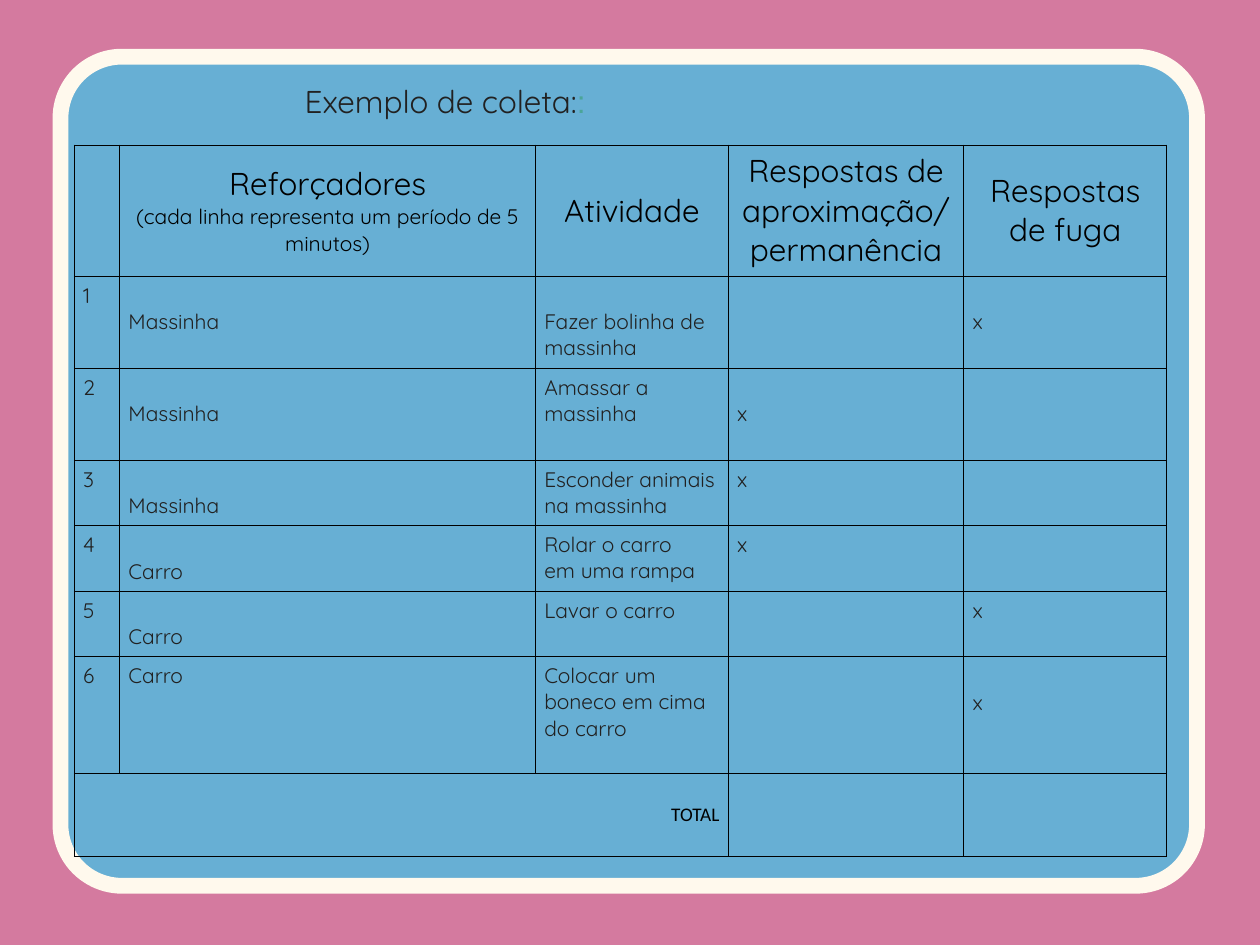
from lxml import etree
from pptx import Presentation
from pptx.dml.color import RGBColor
from pptx.enum import shapes, text
from pptx.oxml import ns
from pptx.util import Inches, Pt

PINK = RGBColor(0xD4, 0x7A, 0x9F)
BLUE = RGBColor(0x67, 0xAF, 0xD4)
CREAM = RGBColor(0xFF, 0xF9, 0xED)
BLACK = RGBColor(0, 0, 0)
DARK = RGBColor(0x21, 0x21, 0x21)
GREEN = RGBColor(0x4A, 0xA5, 0x98)
FONT = "Quicksand"
LINE = 0.21

COLS = [0.36, 3.3, 1.53, 1.87, 1.61]
ROWS = [1.04, 0.73, 0.73, 0.52, 0.52, 0.52, 0.93, 0.66]
HEADERS = [
    [],
    [("Reforçadores", 18), ("(cada linha representa um período de 5 minutos)", 12)],
    [("Atividade", 18)],
    [("Respostas de aproximação/", 18), ("permanência", 18)],
    [("Respostas de fuga", 18)],
]
STAY, ESCAPE = 3, 4
RECORDS = [
    ("Massinha", 1, ["Fazer bolinha de massinha"], 1, ESCAPE, 1),
    ("Massinha", 1, ["Amassar a massinha"], 0, STAY, 1),
    ("Massinha", 1, ["Esconder animais na massinha"], 0, STAY, 0),
    ("Carro", 1, ["Rolar o carro", "em uma rampa"], 0, STAY, 0),
    ("Carro", 1, ["Lavar o carro"], 0, ESCAPE, 0),
    ("Carro", 0, ["Colocar um boneco em cima do carro"], 0, ESCAPE, 1),
]


def add_run(p, words, size, color, font=FONT):
    r = p.add_run()
    r.text = words
    r.font.size = Pt(size)
    r.font.name = font
    r.font.color.rgb = color


def add_frame(slide, left, top, width, height):
    sp = slide.shapes.add_shape(
        shapes.MSO_SHAPE.ROUNDED_RECTANGLE,
        Inches(left), Inches(top), Inches(width), Inches(height))
    sp.adjustments[0] = 0.074
    sp.shadow.inherit = False
    sp.fill.solid()
    sp.fill.fore_color.rgb = BLUE
    sp.line.color.rgb = CREAM
    sp.line.width = Pt(9)


def add_title(slide, left, top, width, height):
    box = slide.shapes.add_textbox(
        Inches(left), Inches(top), Inches(width), Inches(height))
    tf = box.text_frame
    tf.word_wrap = True
    p = tf.paragraphs[0]
    add_run(p, "Exemplo de coleta:", 18, DARK)
    add_run(p, ":", 18, GREEN, "Arial")


def style_cell(cell):
    cell.margin_left = cell.margin_right = Inches(0.07)
    cell.margin_top = cell.margin_bottom = Inches(0.05)
    cell.fill.background()
    props = cell._tc.get_or_add_tcPr()
    for i, side in enumerate(("lnL", "lnR", "lnT", "lnB")):
        ln = etree.Element(ns.qn("a:" + side), w=str(Pt(0.5)))
        fill = etree.SubElement(ln, ns.qn("a:solidFill"))
        etree.SubElement(fill, ns.qn("a:srgbClr"), val=str(BLACK))
        props.insert(i, ln)


def fill_cell(cell, lines, color=DARK, font=FONT, align=None, middle=False, skip=0):
    if middle:
        cell.vertical_anchor = text.MSO_ANCHOR.MIDDLE
    cell.margin_top = Inches(0.05 + skip * LINE)
    tf = cell.text_frame
    for i, (words, size) in enumerate(lines):
        p = tf.add_paragraph() if i else tf.paragraphs[0]
        p.alignment = align
        add_run(p, words, size, color, font)


def add_record_table(slide, left, top):
    table = slide.shapes.add_table(
        len(ROWS), len(COLS), Inches(left), Inches(top),
        Inches(sum(COLS)), Inches(sum(ROWS))).table
    table.first_row = table.horz_banding = False
    for col, width in zip(table.columns, COLS):
        col.width = Inches(width)
    for row, height in zip(table.rows, ROWS):
        row.height = Inches(height)
    for cell in table.iter_cells():
        style_cell(cell)

    for c, lines in enumerate(HEADERS):
        fill_cell(table.cell(0, c), lines, BLACK,
                  align=text.PP_ALIGN.CENTER, middle=True)

    for n, record in enumerate(RECORDS, 1):
        reinforcer, skip, activity, activity_skip, column, mark_skip = record
        fill_cell(table.cell(n, 0), [(str(n), 12)])
        fill_cell(table.cell(n, 1), [(reinforcer, 12)], skip=skip)
        fill_cell(table.cell(n, 2), [(a, 12) for a in activity], skip=activity_skip)
        fill_cell(table.cell(n, column), [("x", 12)], skip=mark_skip)

    last = len(ROWS) - 1
    total = table.cell(last, 0)
    total.merge(table.cell(last, 2))
    fill_cell(total, [("TOTAL", 11)], BLACK, "Calibri",
              text.PP_ALIGN.RIGHT, middle=True)


def main():
    prs = Presentation()
    prs.slide_width = Inches(10)
    prs.slide_height = Inches(7.5)
    slide = prs.slides.add_slide(prs.slide_layouts[6])
    slide.background.fill.solid()
    slide.background.fill.fore_color.rgb = PINK
    add_frame(slide, 0.48, 0.45, 9.02, 6.58)
    add_record_table(slide, 0.59, 1.15)
    add_title(slide, 2.32, 0.6, 4.33, 0.4)
    prs.save("out.pptx")


if __name__ == "__main__":
    main()
